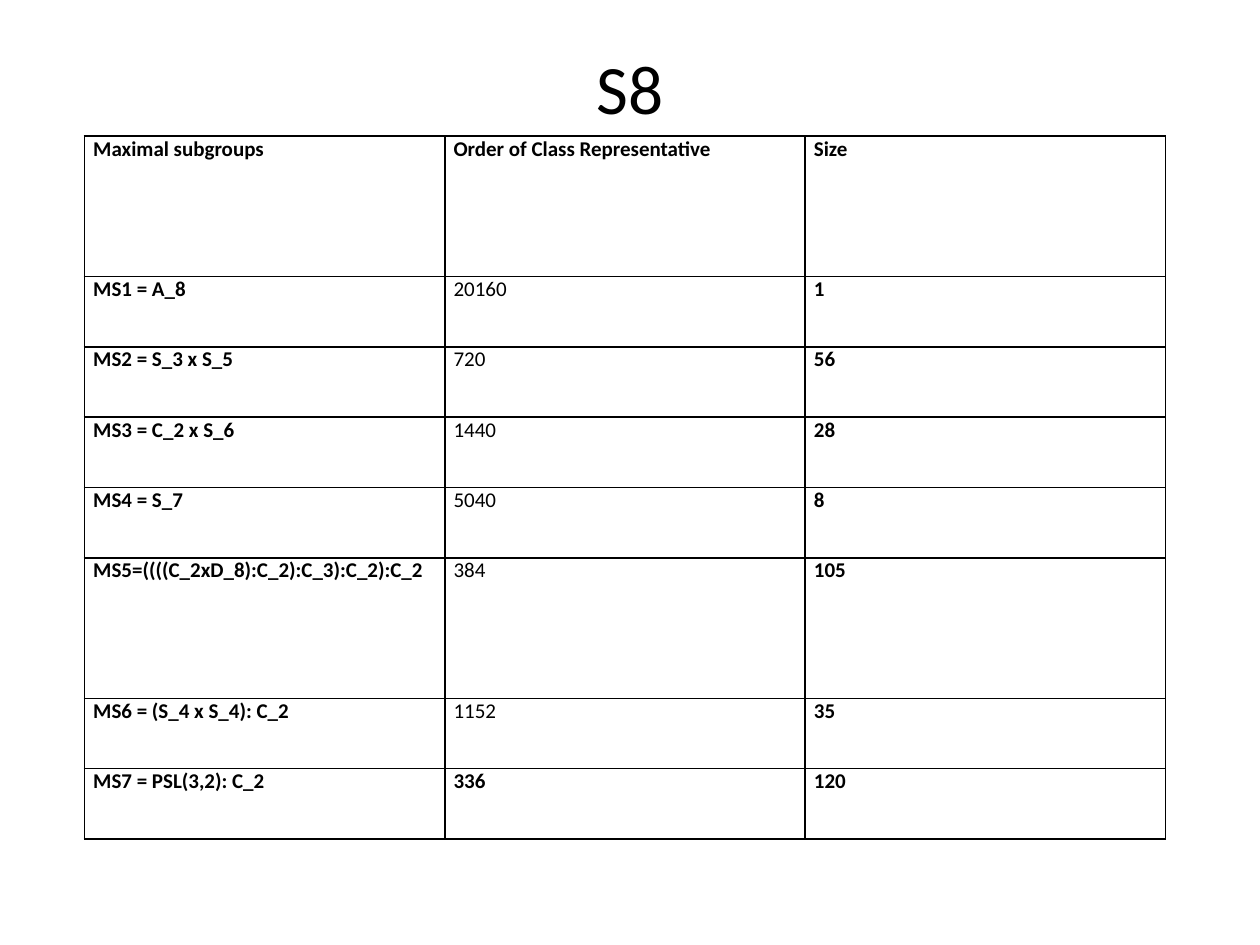
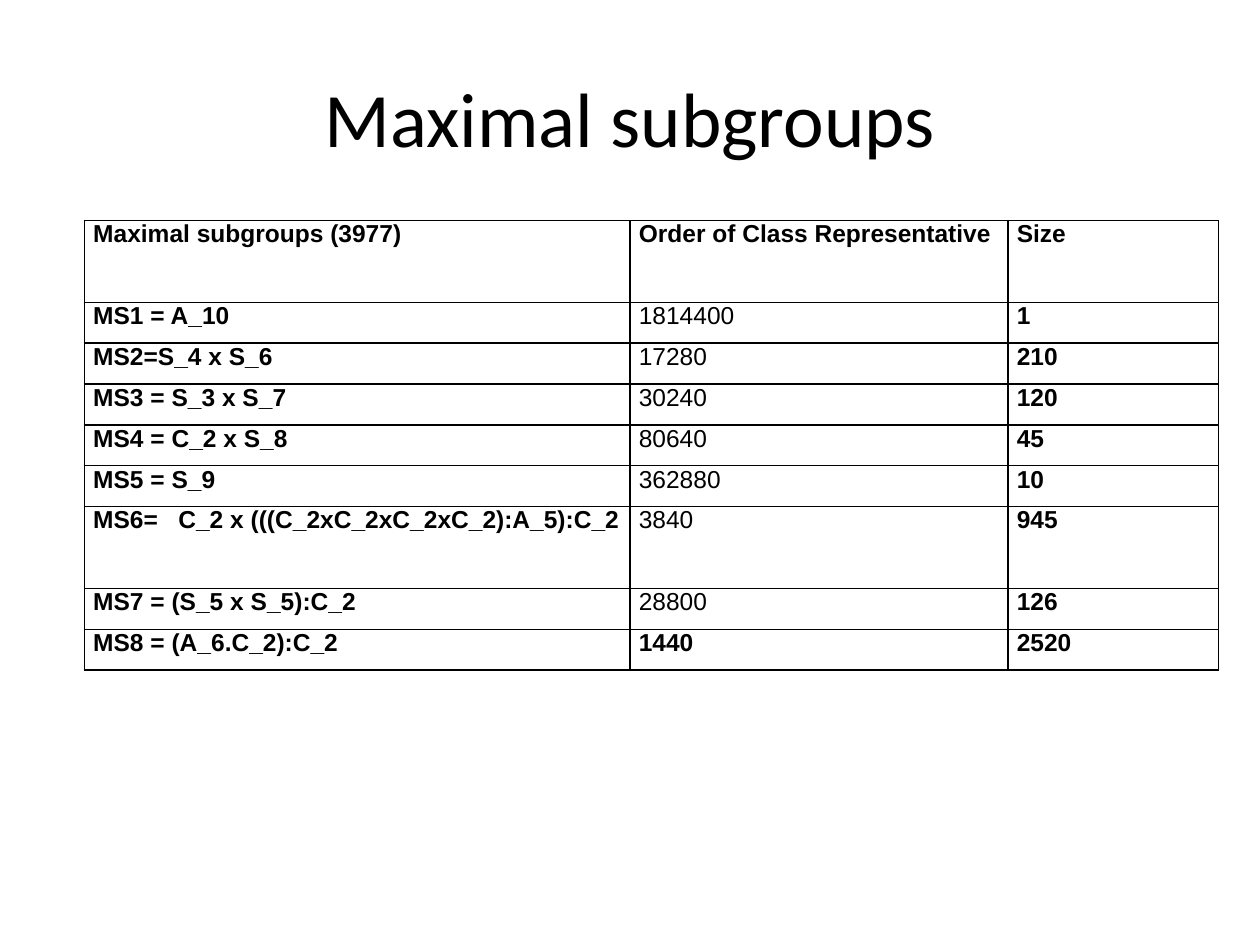
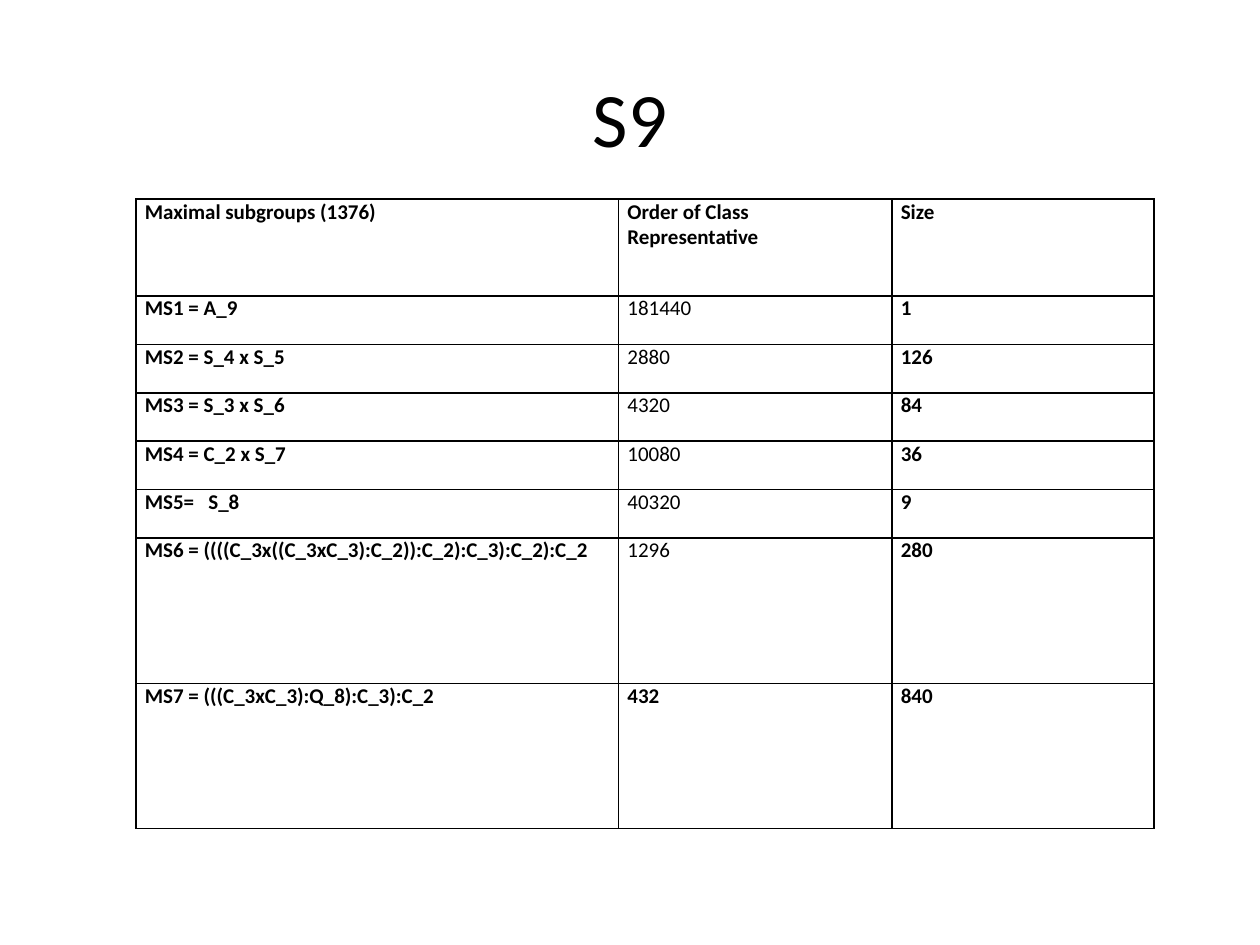
import pptx
import pptx.dml.color
import pptx.enum.text
import pptx.oxml
import pptx.oxml.ns
import pptx.util

Inches = pptx.util.Inches
Pt = pptx.util.Pt

COLORS = {"ink": "000000", "paper": "FFFFFF"}
TITLE_FONT = "Calibri"
BORDER_WIDTH = Pt(1)
ORDER_HEADING = "Order of Class Representative"

# "units" gives each row's height as a multiple of the table's basic row.
SLIDES = [
    {
        "title": "S8", "title_size": 39.6, "title_height": 0.78,
        "at": (0.67, 1.08), "height": 5.58, "columns": [2.86, 2.86, 2.86],
        "units": [2, 1, 1, 1, 1, 2, 1, 1],
        "font": "Calibri", "size": 12, "filled": True,
        "rows": [
            ("Maximal subgroups", ORDER_HEADING, "Size"),
            ("MS1 = A_8", "20160", "1"),
            ("MS2 = S_3 x S_5", "720", "56"),
            ("MS3 = C_2 x S_6", "1440", "28"),
            ("MS4 = S_7", "5040", "8"),
            ("MS5=((((C_2xD_8):C_2):C_3):C_2):C_2", "384", "105"),
            ("MS6 = (S_4 x S_4): C_2", "1152", "35"),
            ("MS7 = PSL(3,2): C_2", "336", "120"),
        ],
    },
    {
        "title": "Maximal subgroups", "title_size": 44, "title_height": 1.25,
        "at": (0.67, 1.75), "height": 3.57, "columns": [4.33, 3, 1.67],
        "units": [2, 1, 1, 1, 1, 1, 2, 1, 1],
        "font": "Arial", "size": 14, "filled": False,
        "rows": [
            ("Maximal subgroups (3977)", ORDER_HEADING, "Size"),
            ("MS1 = A_10", "1814400", "1"),
            ("MS2=S_4 x S_6", "17280", "210"),
            ("MS3 = S_3 x S_7", "30240", "120"),
            ("MS4 = C_2 x S_8", "80640", "45"),
            ("MS5 = S_9", "362880", "10"),
            ("MS6=   C_2 x (((C_2xC_2xC_2xC_2):A_5):C_2", "3840", "945"),
            ("MS7 = (S_5 x S_5):C_2", "28800", "126"),
            ("MS8 = (A_6.C_2):C_2", "1440", "2520"),
        ],
    },
    {
        "title": "S9", "title_size": 44, "title_height": 1.25,
        "at": (1.08, 1.58), "height": 5, "columns": [3.83, 2.17, 2.08],
        "units": [2, 1, 1, 1, 1, 1, 3, 3],
        "font": "Calibri", "size": 12, "filled": True,
        "rows": [
            ("Maximal subgroups (1376)", ORDER_HEADING, "Size"),
            ("MS1 = A_9", "181440", "1"),
            ("MS2 = S_4 x S_5", "2880", "126"),
            ("MS3 = S_3 x S_6", "4320", "84"),
            ("MS4 = C_2 x S_7", "10080", "36"),
            ("MS5=   S_8", "40320", "9"),
            ("MS6 = ((((C_3x((C_3xC_3):C_2)):C_2):C_3):C_2):C_2", "1296", "280"),
            ("MS7 = (((C_3xC_3):Q_8):C_3):C_2", "432", "840"),
        ],
    },
]


def add_span(para, text, font, size, bold=False):
    span = para.add_run()
    span.text = text
    span.font.name = font
    span.font.size = Pt(size)
    span.font.bold = bold
    span.font.color.rgb = pptx.dml.color.RGBColor.from_string(COLORS["ink"])


def add_borders(cell):
    properties = cell._tc.get_or_add_tcPr()
    for side in ("lnL", "lnR", "lnT", "lnB"):
        properties.append(pptx.oxml.parse_xml(
            f'<a:{side} {pptx.oxml.ns.nsdecls("a")} w="{BORDER_WIDTH}">'
            f'<a:solidFill><a:srgbClr val="{COLORS["ink"]}"/></a:solidFill></a:{side}>'
        ))


deck = pptx.Presentation()
deck.slide_width, deck.slide_height = Inches(10), Inches(7.5)

for content in SLIDES:
    page = deck.slides.add_slide(deck.slide_layouts[6])

    title_box = page.shapes.add_textbox(
        Inches(0.5), Inches(0.3), Inches(9), Inches(content["title_height"]))
    title_box.text_frame.word_wrap = True
    title_box.text_frame.vertical_anchor = pptx.enum.text.MSO_ANCHOR.MIDDLE
    title_para = title_box.text_frame.paragraphs[0]
    title_para.alignment = pptx.enum.text.PP_ALIGN.CENTER
    add_span(title_para, content["title"], TITLE_FONT, content["title_size"])

    rows, columns, units = content["rows"], content["columns"], content["units"]
    left, top = content["at"]
    table = page.shapes.add_table(
        len(rows), len(columns), Inches(left), Inches(top),
        Inches(sum(columns)), Inches(content["height"])).table
    table.first_row = table.horz_banding = False
    for column, width in zip(table.columns, columns):
        column.width = Inches(width)
    for row, unit in zip(table.rows, units):
        row.height = Inches(content["height"] * unit / sum(units))

    for row_index, texts in enumerate(rows):
        for column_index, text in enumerate(texts):
            cell = table.cell(row_index, column_index)
            cell.margin_left = cell.margin_right = Inches(0.07)
            cell.margin_top = cell.margin_bottom = 0
            add_borders(cell)
            if content["filled"]:
                cell.fill.solid()
                cell.fill.fore_color.rgb = pptx.dml.color.RGBColor.from_string(COLORS["paper"])
            else:
                cell.fill.background()
            # Orders are plain except in the first and last rows.
            bold = column_index != 1 or row_index in (0, len(rows) - 1)
            add_span(cell.text_frame.paragraphs[0], text,
                     content["font"], content["size"], bold)

deck.save("out.pptx")
